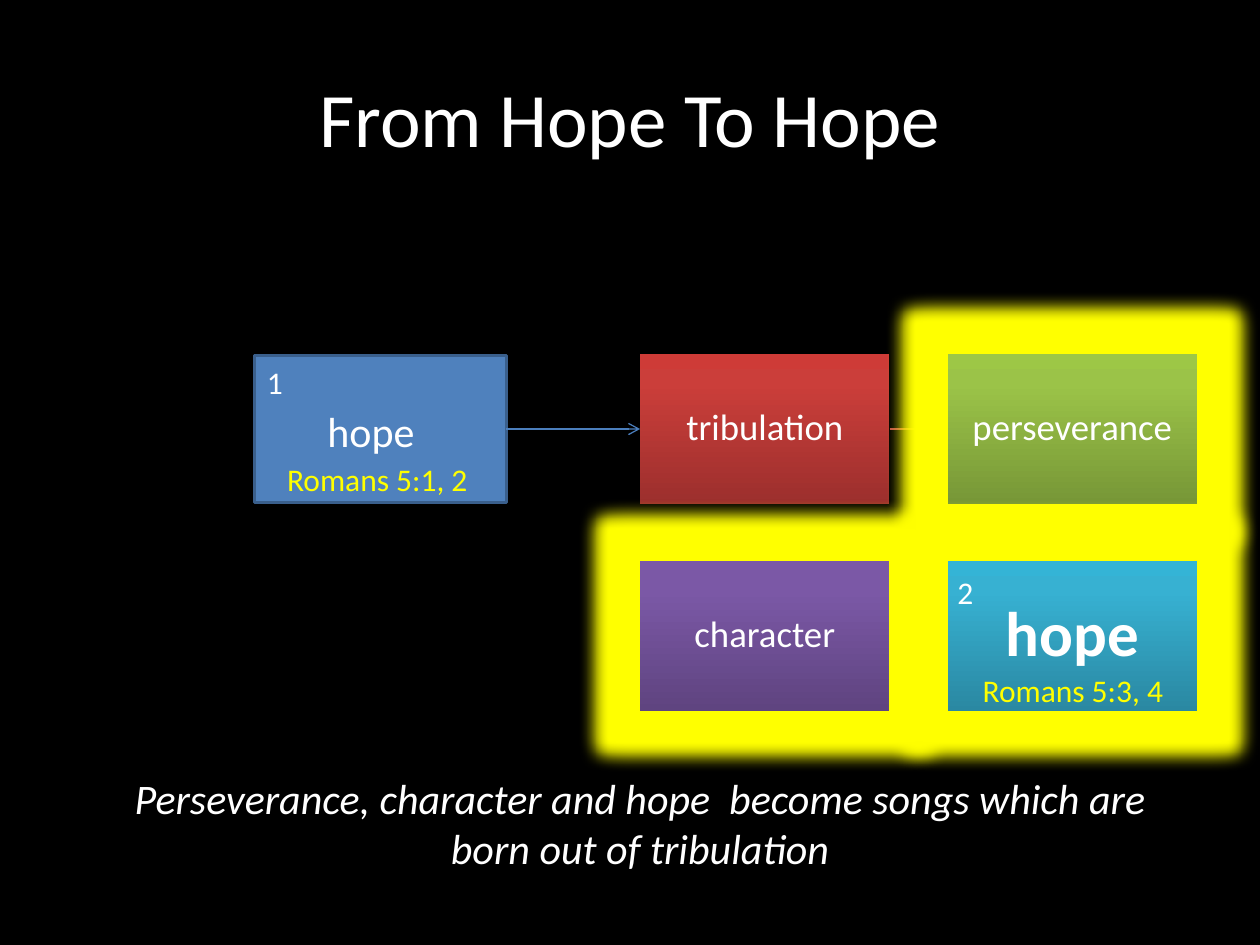
"""Build the "From Hope To Hope" slide: a chain of linked cards on black."""
import copy
from dataclasses import dataclass
from typing import Optional

import pptx
import pptx.dml.color
import pptx.enum.shapes
import pptx.enum.text
import pptx.oxml
import pptx.oxml.ns
import pptx.util
from pptx.util import Inches

Align = pptx.enum.text.PP_ALIGN
Anchor = pptx.enum.text.MSO_ANCHOR
RECTANGLE = pptx.enum.shapes.MSO_SHAPE.RECTANGLE
STRAIGHT = pptx.enum.shapes.MSO_CONNECTOR.STRAIGHT
qn = pptx.oxml.ns.qn


@dataclass(frozen=True)
class Theme:
    font: str = "Calibri"
    background: str = "000000"
    text: str = "FFFFFF"
    accent: str = "FFFF00"
    start_fill: str = "4F81BD"
    start_border: str = "3A5F8C"
    start_link: str = "4B7EBC"
    title_size: int = 44
    final_size: int = 36
    body_size: int = 24
    card_size: int = 21
    note_size: int = 18
    link_width: float = 0.75
    border_width: float = 2
    glow_radius: float = 0.25


THEME = Theme()
CARD_WIDTH, CARD_HEIGHT = 1.98, 1.19
COLUMNS, ROWS = (5.08, 7.52), (2.81, 4.45)
LINK_GAP = 0.04


@dataclass(frozen=True)
class Card:
    text: str
    column: int
    row: int
    shades: tuple[str, str, str]
    glow: bool = True
    size: int = THEME.card_size
    bold: bool = False
    inset: float = 0.16


@dataclass(frozen=True)
class Label:
    text: str
    left: float
    top: float
    width: float
    height: float = 0.4
    size: int = THEME.note_size
    color: str = THEME.text
    italic: bool = False
    wrap: bool = False
    align: Optional[Align] = None


CARDS = (
    Card("tribulation", 0, 0, ("9C2F2D", "CB3E3A", "CE3B37"), glow=False),
    Card("perseverance", 1, 0, ("779737", "9BC348", "9DC746")),
    Card("character", 0, 1, ("5F4480", "7B58A6", "7C57A8")),
    Card("hope", 1, 1, ("2A88A2", "37B1D2", "34B4D6"),
         size=THEME.final_size, bold=True, inset=0.28),
)
LABELS = (
    Label("2", 7.5, 4.5, 0.33),
    Label("Perseverance, character and hope  become songs which are born out of tribulation",
          0.73, 6.08, 8.7, 0.91, THEME.body_size, italic=True, wrap=True, align=Align.CENTER),
    Label("hope", 2.5, 3.17, 0.9, 0.5, THEME.body_size),
    Label("1", 2.02, 2.83, 0.33),
    Label("Romans 5:1, 2", 2.18, 3.6, 1.65, color=THEME.accent),
    Label("Romans 5:3, 4", 7.7, 5.28, 1.65, color=THEME.accent),
)


def rgb(value: str) -> pptx.dml.color.RGBColor:
    return pptx.dml.color.RGBColor.from_string(value)


def write(frame, text: str, size: int, color: str = THEME.text, align=None,
          bold: bool = False, italic: bool = False) -> None:
    frame.text = text
    paragraph = frame.paragraphs[0]
    paragraph.alignment = align
    font = paragraph.runs[0].font
    font.name, font.size = THEME.font, pptx.util.Pt(size)
    font.bold, font.italic = bold, italic
    font.color.rgb = rgb(color)


def set_line(shape, color: str, width: float) -> None:
    shape.line.color.rgb = rgb(color)
    shape.line.width = pptx.util.Pt(width)


def shade(shape, colors: tuple[str, str, str]) -> None:
    shape.fill.gradient()
    shape.fill.gradient_angle = 90
    stop_list = next(shape._element.iter(qn("a:gsLst")))
    stop_list.append(copy.deepcopy(stop_list[-1]))
    for stop, position, color in zip(shape.fill.gradient_stops, (0, 0.8, 1), colors):
        stop.position = position
        stop.color.rgb = rgb(color)


def add_glow(shape) -> None:
    shape._element.spPr.find(qn("a:effectLst")).append(pptx.oxml.parse_xml(
        f'<a:glow {pptx.oxml.ns.nsdecls("a")} rad="{Inches(THEME.glow_radius)}">'
        f'<a:srgbClr val="{THEME.accent}"/></a:glow>'))


def draw_card(shapes, card: Card):
    box = shapes.add_shape(RECTANGLE, Inches(COLUMNS[card.column]), Inches(ROWS[card.row]),
                           Inches(CARD_WIDTH), Inches(CARD_HEIGHT))
    shade(box, card.shades)
    box.line.fill.background()
    box.shadow.inherit = False
    if card.glow:
        add_glow(box)
    frame = box.text_frame
    frame.word_wrap = True
    frame.vertical_anchor = Anchor.MIDDLE
    frame.margin_left = frame.margin_right = Inches(card.inset)
    frame.margin_top = frame.margin_bottom = Inches(card.inset)
    write(frame, card.text, card.size, align=Align.CENTER, bold=card.bold)
    frame.paragraphs[0].line_spacing = 0.9
    return box


def draw_label(shapes, label: Label) -> None:
    box = shapes.add_textbox(Inches(label.left), Inches(label.top),
                             Inches(label.width), Inches(label.height))
    frame = box.text_frame
    write(frame, label.text, label.size, label.color, label.align, italic=label.italic)
    frame.word_wrap = label.wrap
    frame.auto_size = pptx.enum.text.MSO_AUTO_SIZE.SHAPE_TO_FIT_TEXT


def finish_link(link, color: str) -> None:
    set_line(link, color, THEME.link_width)
    properties = link._element.spPr
    tail = pptx.oxml.parse_xml(f'<a:tailEnd {pptx.oxml.ns.nsdecls("a")} type="arrow"/>')
    properties.find(qn("a:ln")).append(tail)
    if properties.find(qn("a:effectLst")) is None:
        properties.append(pptx.oxml.parse_xml(f'<a:effectLst {pptx.oxml.ns.nsdecls("a")}/>'))


def draw_row_link(shapes, source, target, color: str, gap: float = 0):
    middle = source.top + source.height // 2
    link = shapes.add_connector(STRAIGHT, source.left + source.width, middle,
                                target.left - Inches(gap), middle)
    link.begin_connect(source, 3)
    if not gap:
        link.end_connect(target, 1)
    finish_link(link, color)
    return link


def draw_wrap_link(shapes, source, target, color: str):
    start_x, end_x = (card.left + card.width // 2 for card in (source, target))
    start_y, end_y = source.top + source.height, target.top - Inches(LINK_GAP)
    turn_y = (source.top + source.height + target.top) // 2
    builder = shapes.build_freeform(start_x, start_y)
    builder.add_line_segments([(start_x, turn_y), (end_x, turn_y), (end_x, end_y)], close=False)
    link = builder.convert_to_shape()
    link.fill.background()
    link.shadow.inherit = False
    finish_link(link, color)
    return link


def main() -> None:
    deck = pptx.Presentation()
    deck.slide_width, deck.slide_height = Inches(10), Inches(7.5)
    slide = deck.slides.add_slide(deck.slide_layouts[5])
    slide.background.fill.solid()
    slide.background.fill.fore_color.rgb = rgb(THEME.background)
    shapes = slide.shapes

    title = shapes.title
    title.left, title.top, title.width, title.height = map(Inches, (0.5, 0.3, 9, 1.25))
    title.text_frame.vertical_anchor = Anchor.MIDDLE
    write(title.text_frame, "From Hope To Hope", THEME.title_size, align=Align.CENTER)

    tribulation, perseverance, character, final_hope = [draw_card(shapes, card) for card in CARDS]
    links = (
        draw_row_link(shapes, tribulation, perseverance, "C0504D", LINK_GAP),
        draw_wrap_link(shapes, perseverance, character, "9BBB59"),
        draw_row_link(shapes, character, final_hope, "8064A2", LINK_GAP),
    )
    for link in links:
        tribulation._element.addprevious(link._element)

    first_hope = shapes.add_shape(RECTANGLE, Inches(2.02), Inches(2.82), Inches(2), Inches(1.17))
    first_hope.fill.solid()
    first_hope.fill.fore_color.rgb = rgb(THEME.start_fill)
    first_hope.shadow.inherit = False
    set_line(first_hope, THEME.start_border, THEME.border_width)
    draw_row_link(shapes, first_hope, tribulation, THEME.start_link)
    for label in LABELS:
        draw_label(shapes, label)
    deck.save("out.pptx")


if __name__ == "__main__":
    main()
